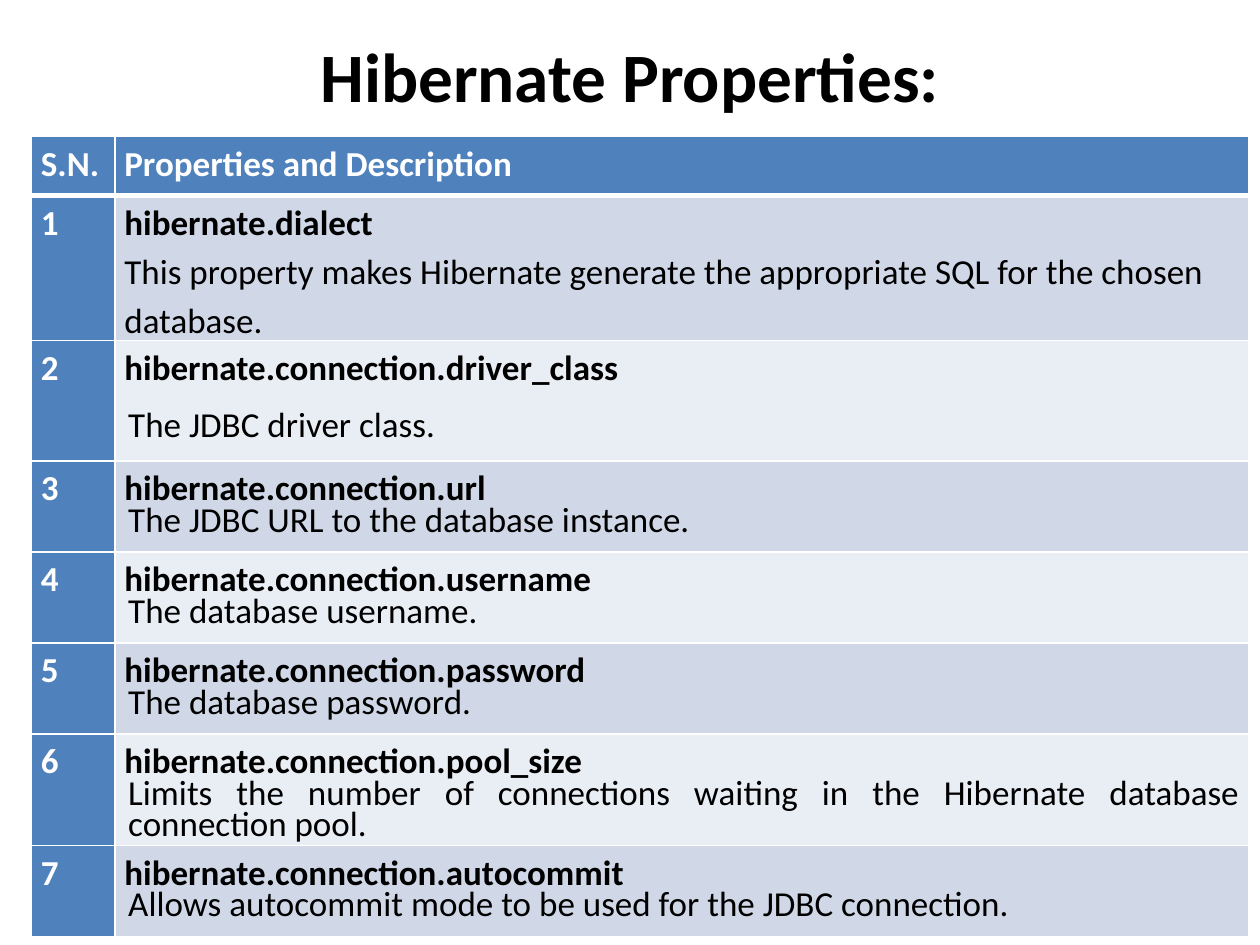
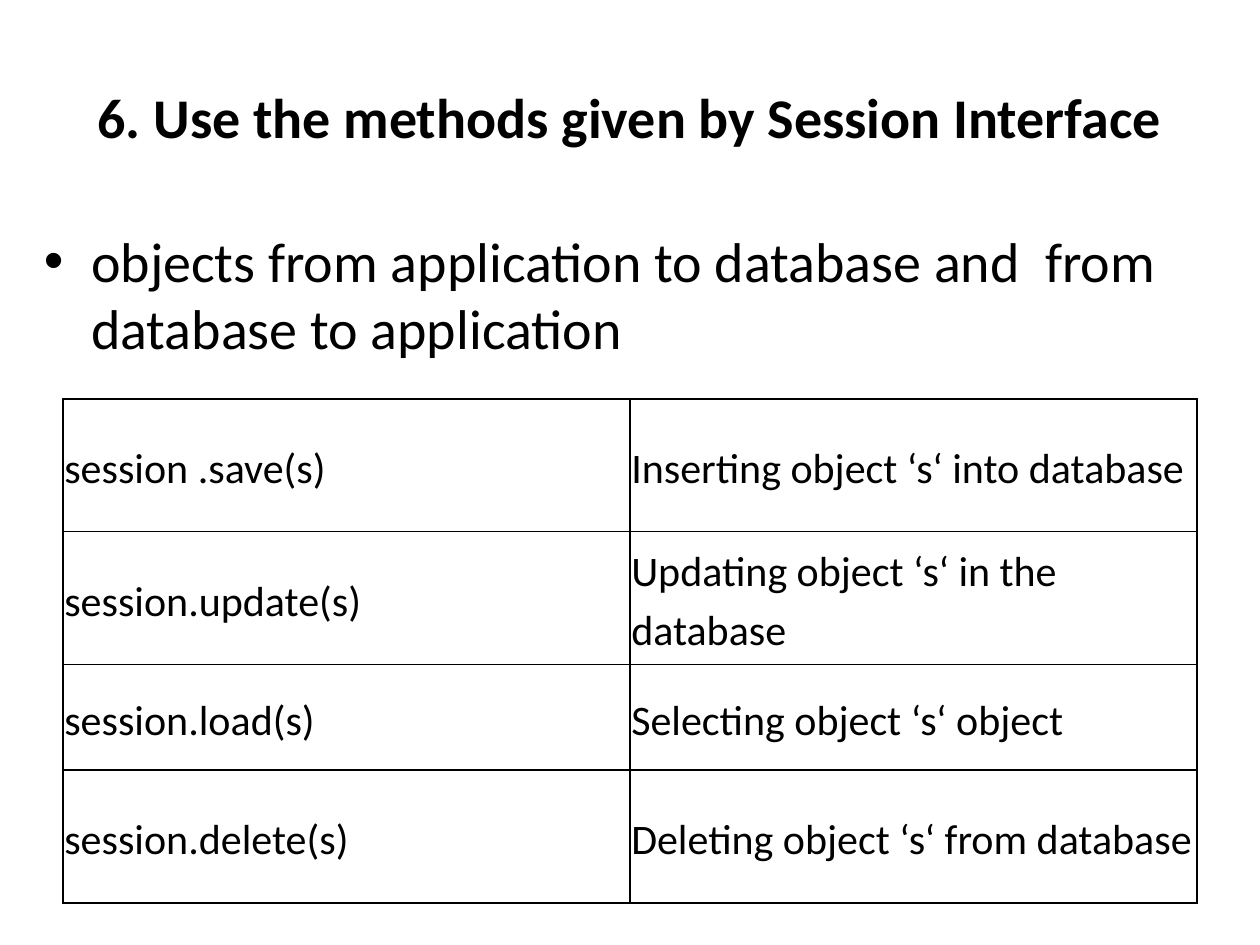
"""Builds two slides on Hibernate properties and session methods."""
from lxml import etree
from pptx import Presentation
from pptx.dml.color import RGBColor
from pptx.enum.text import MSO_ANCHOR, PP_ALIGN
from pptx.oxml.ns import qn
from pptx.util import Pt

CENTER, JUSTIFY = PP_ALIGN.CENTER, PP_ALIGN.JUSTIFY
TOP, MIDDLE = MSO_ANCHOR.TOP, MSO_ANCHOR.MIDDLE
FONT = "Calibri"
COLORS = {
    "text": "000000",
    "white": "FFFFFF",
    "header": "4F81BD",
    "odd_row": "D0D8E8",
    "even_row": "E9EDF4",
}
PROPERTIES = [
    ("hibernate.dialect",
     "This property makes Hibernate generate the appropriate SQL for the chosen database."),
    ("hibernate.connection.driver_class", "The JDBC driver class."),
    ("hibernate.connection.url", "The JDBC URL to the database instance."),
    ("hibernate.connection.username", "The database username."),
    ("hibernate.connection.password", "The database password."),
    ("hibernate.connection.pool_size",
     "Limits the number of connections waiting in the Hibernate database connection pool."),
    ("hibernate.connection.autocommit",
     "Allows autocommit mode to be used for the JDBC connection."),
]
METHODS = [
    ("session .save(s)", "Inserting object ‘s‘ into database"),
    ("session.update(s)", "Updating object ‘s‘ in the database"),
    ("session.load(s)", "Selecting object ‘s‘ object"),
    ("session.delete(s)", "Deleting object ‘s‘ from database"),
]


def rgb(name):
    """Return the named colour."""
    return RGBColor.from_string(COLORS[name])


def style_paragraph(paragraph, size, color="text", bold=None, align=None,
                    spacing=None, after=0):
    """Set the font and spacing of a paragraph."""
    font = paragraph.font
    font.name, font.size, font.bold = FONT, Pt(size), bold
    font.color.rgb = rgb(color)
    paragraph.alignment = align
    paragraph.line_spacing = spacing
    paragraph.space_after = Pt(after)


def indent_paragraph(paragraph, left, first=0):
    """Set the left margin and first-line indent of a paragraph."""
    properties = paragraph._p.get_or_add_pPr()
    properties.set("marL", str(Pt(left)))
    properties.set("indent", str(Pt(first)))
    return properties


def add_text_box(slide, left, top, width, height, anchor=TOP):
    """Add a wrapping text box and return its text frame."""
    frame = slide.shapes.add_textbox(Pt(left), Pt(top), Pt(width), Pt(height)).text_frame
    frame.word_wrap = True
    frame.vertical_anchor = anchor
    return frame


def add_title(slide, text, size):
    """Add the bold centred slide title."""
    paragraph = add_text_box(slide, 36, 21.6, 648, 90, MIDDLE).paragraphs[0]
    paragraph.text = text
    style_paragraph(paragraph, size, bold=True, align=CENTER)


def add_bullet(slide, text):
    """Add the bulleted body text."""
    paragraph = add_text_box(slide, 18, 126, 678, 356).paragraphs[0]
    paragraph.text = text
    style_paragraph(paragraph, 32)
    paragraph.space_before = Pt(6.4)
    properties = indent_paragraph(paragraph, 27, -27)
    bullet_font = etree.Element(qn("a:buFont"), typeface="Arial")
    bullet = etree.Element(qn("a:buChar"), char="•")
    properties.find(qn("a:defRPr")).addprevious(bullet_font)
    bullet_font.addnext(bullet)


def add_table(slide, left, top, column_widths, row_heights):
    """Add a table with the given column widths and row heights."""
    table = slide.shapes.add_table(
        len(row_heights), len(column_widths), Pt(left), Pt(top),
        Pt(sum(column_widths)), Pt(sum(row_heights))).table
    table.first_row = table.horz_banding = False
    for column, width in zip(table.columns, column_widths):
        column.width = Pt(width)
    for row, height in zip(table.rows, row_heights):
        row.height = Pt(height)
    return table


def format_cell(cell, border, fill=None, side=0, edge=0, anchor=TOP, bottom=1):
    """Set the fill, margins, anchor and borders of a cell."""
    if fill:
        cell.fill.solid()
        cell.fill.fore_color.rgb = rgb(fill)
    else:
        cell.fill.background()
    cell.margin_left = cell.margin_right = Pt(side)
    cell.margin_top = cell.margin_bottom = Pt(edge)
    cell.vertical_anchor = anchor
    properties = cell._tc.get_or_add_tcPr()
    for index, tag in enumerate(("a:lnL", "a:lnR", "a:lnT", "a:lnB")):
        width = bottom if tag == "a:lnB" else 1
        line = etree.Element(qn(tag), w=str(Pt(width)))
        solid = etree.SubElement(line, qn("a:solidFill"))
        etree.SubElement(solid, qn("a:srgbClr"), val=COLORS[border])
        properties.insert(index, line)


def fill_header_cell(cell, text, after, bottom=1):
    """Write a white bold label on the header colour."""
    format_cell(cell, "white", "header", side=5.4, bottom=bottom)
    paragraph = cell.text_frame.paragraphs[0]
    paragraph.text = text
    style_paragraph(paragraph, 20, "white", True, spacing=1.15, after=after)


def fill_property_cell(cell, number, name, description, after):
    """Write a property name and its description."""
    format_cell(cell, "white", "odd_row" if number % 2 else "even_row", side=5.4)
    paragraph = cell.text_frame.paragraphs[0]
    if number == 1:
        style_paragraph(paragraph, 20, spacing=1.15, after=after)
        name_run = paragraph.add_run()
        name_run.text = name
        name_run.font.bold = True
        paragraph.add_line_break()
        paragraph.add_run().text = description
        return
    paragraph.text = name
    style_paragraph(paragraph, 20, bold=True, spacing=1.15, after=after)
    detail = cell.text_frame.add_paragraph()
    detail.text = description
    style_paragraph(detail, 20, align=JUSTIFY, spacing=Pt(18), after=12)
    indent_paragraph(detail, 2.2)


def add_property_table(slide):
    """Add the numbered table of properties."""
    table = add_table(slide, 18, 78, [47.7, 648], [33.7, 52, 69] + [52] * 5)
    for column, label in enumerate(("S.N.", "Properties and Description")):
        fill_header_cell(table.cell(0, column), label, 15, bottom=3)
    for number, (name, description) in enumerate(PROPERTIES, 1):
        after = 15 if number <= 2 else 0
        fill_header_cell(table.cell(number, 0), str(number), after)
        fill_property_cell(table.cell(number, 1), number, name, description, after)


def add_method_table(slide):
    """Add the bordered table of session methods."""
    table = add_table(slide, 36, 228, [324, 324], [75.8, 75.8, 60.5, 75.8])
    for row, texts in enumerate(METHODS):
        for column, text in enumerate(texts):
            cell = table.cell(row, column)
            format_cell(cell, "text", side=0.75, edge=0.75, anchor=MIDDLE)
            paragraph = cell.text_frame.paragraphs[0]
            paragraph.text = text
            style_paragraph(paragraph, 24, spacing=1.15, after=10)


def main():
    """Build and save the presentation."""
    presentation = Presentation()
    presentation.slide_width, presentation.slide_height = Pt(720), Pt(540)
    blank = presentation.slide_layouts[6]

    slide = presentation.slides.add_slide(blank)
    add_title(slide, "Hibernate Properties:\v", 39.6)
    add_property_table(slide)

    slide = presentation.slides.add_slide(blank)
    add_title(slide, "6. Use the methods given by Session Interface", 32)
    add_bullet(slide, "objects from application to database and  from database to application")
    add_method_table(slide)

    presentation.save("out.pptx")


if __name__ == "__main__":
    main()
